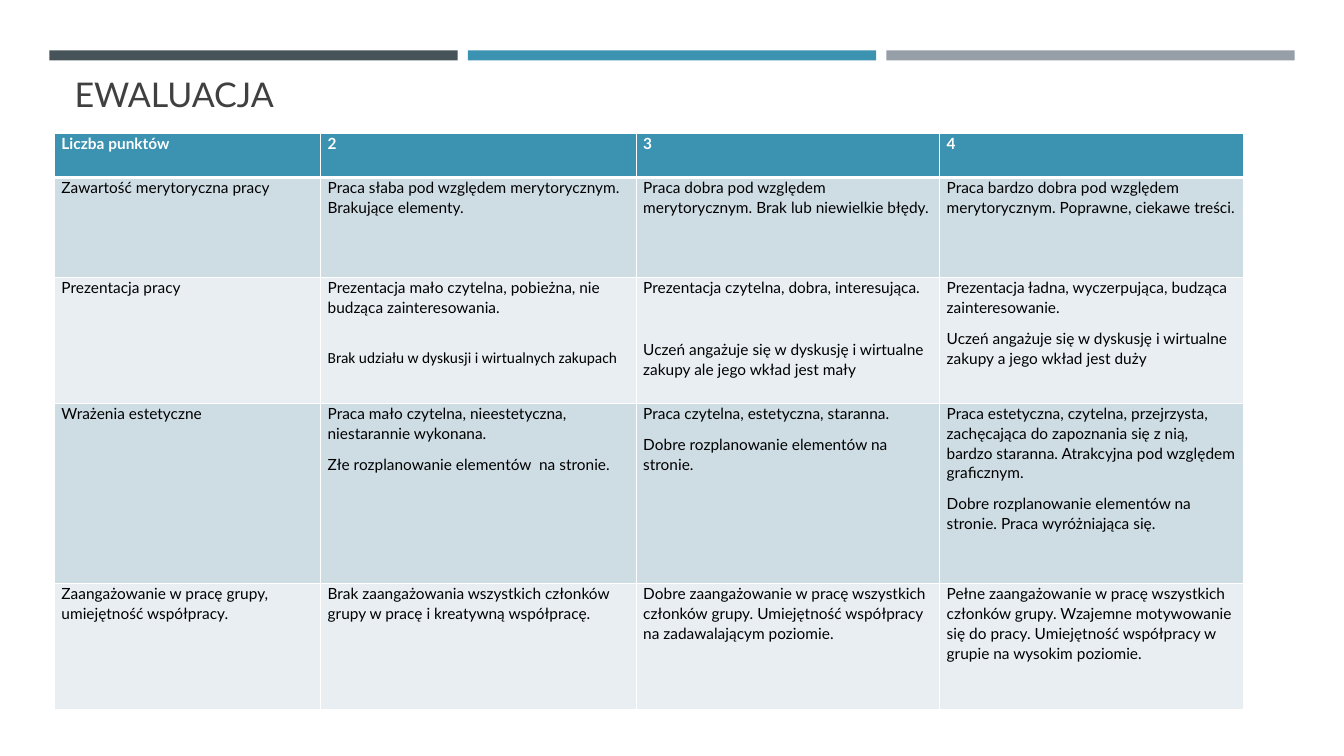
"""Build the evaluation rubric slide."""
from pptx import Presentation, util as u
from pptx.dml.color import RGBColor
from pptx.enum import shapes, text
from pptx.oxml import parse_xml
from pptx.oxml.ns import nsdecls

SLATE = RGBColor(0x46, 0x53, 0x59)
TEAL = RGBColor(0x3B, 0x92, 0xB1)
GREY = RGBColor(0x96, 0x9F, 0xA7)
TITLE = RGBColor(0x40, 0x40, 0x40)
DARK_BAND = RGBColor(0xCE, 0xDC, 0xE4)
LIGHT_BAND = RGBColor(0xE8, 0xEE, 0xF2)
WHITE = RGBColor(0xFF, 0xFF, 0xFF)
BLACK = RGBColor(0, 0, 0)

COLS = [2.64, 3.13, 3.01, 3.01]
ROWS = [0.44, 0.99, 1.25, 1.79, 1.25]
RUBRIC = [
    ["Liczba punktów", "2", "3", "4"],
    ["Zawartość merytoryczna pracy",
     "Praca słaba pod względem merytorycznym. Brakujące elementy.",
     "Praca dobra pod względem merytorycznym. Brak lub niewielkie błędy.",
     "Praca bardzo dobra pod względem merytorycznym. Poprawne, ciekawe treści."],
    ["Prezentacja pracy",
     "Prezentacja mało czytelna, pobieżna, nie budząca zainteresowania.\n"
     "Brak udziału w dyskusji i wirtualnych zakupach",
     "Prezentacja czytelna, dobra, interesująca.\n"
     "Uczeń angażuje się w dyskusję i wirtualne zakupy ale jego wkład jest mały",
     "Prezentacja ładna, wyczerpująca, budząca zainteresowanie.\n"
     "Uczeń angażuje się w dyskusję i wirtualne zakupy a jego wkład jest duży"],
    ["Wrażenia estetyczne",
     "Praca mało czytelna, nieestetyczna, niestarannie wykonana.\n"
     "Złe rozplanowanie elementów  na stronie.",
     "Praca czytelna, estetyczna, staranna.\n"
     "Dobre rozplanowanie elementów na stronie.",
     "Praca estetyczna, czytelna, przejrzysta, zachęcająca do zapoznania się z nią, "
     "bardzo staranna. Atrakcyjna pod względem graficznym.\n"
     "Dobre rozplanowanie elementów na stronie. Praca wyróżniająca się."],
    ["Zaangażowanie w pracę grupy, umiejętność współpracy.",
     "Brak zaangażowania wszystkich członków grupy w pracę i kreatywną współpracę.",
     "Dobre zaangażowanie w pracę wszystkich członków grupy. "
     "Umiejętność współpracy na zadawalającym poziomie.",
     "Pełne zaangażowanie w pracę wszystkich członków grupy. "
     "Wzajemne motywowanie się do pracy. "
     "Umiejętność współpracy w grupie na wysokim poziomie."],
]


def style_run(r, size, color, bold=False, font="Lato"):
    r.font.size, r.font.bold, r.font.name = u.Pt(size), bold, font
    r.font.color.rgb = color


def add_border(cell, side, width):
    cell._tc.get_or_add_tcPr().append(parse_xml(
        f'<a:{side} {nsdecls("a")} w="{u.Pt(width)}"><a:solidFill>'
        f'<a:srgbClr val="{WHITE}"/></a:solidFill></a:{side}>'))


prs = Presentation()
prs.slide_width, prs.slide_height = u.Inches(13.33), u.Inches(7.5)
s = prs.slides.add_slide(prs.slide_layouts[5])

for i, color in enumerate([SLATE, TEAL, GREY]):
    bar = s.shapes.add_shape(shapes.MSO_SHAPE.RECTANGLE, u.Inches(0.49 + 4.15 * i),
                             u.Inches(0.5), u.Inches(4.05), u.Inches(0.1))
    bar.shadow.inherit = False
    bar.fill.solid()
    bar.fill.fore_color.rgb = color
    bar.line.fill.background()

title = s.shapes.title
title.left, title.top = u.Inches(0.64), u.Inches(0.77)
title.width, title.height = u.Inches(12.06), u.Inches(0.42)
tf = title.text_frame
tf.text = "EWALUACJA"
tf.auto_size = text.MSO_AUTO_SIZE.NONE
tf.vertical_anchor = text.MSO_ANCHOR.BOTTOM
p = tf.paragraphs[0]
p.alignment, p.line_spacing = text.PP_ALIGN.LEFT, 0.9
style_run(p.runs[0], 24.3, TITLE)

table = s.shapes.add_table(len(ROWS), len(COLS), u.Inches(0.54), u.Inches(1.32),
                           u.Inches(sum(COLS)), u.Inches(sum(ROWS))).table
for column, width in zip(table.columns, COLS):
    column.width = u.Inches(width)
for row, height in zip(table.rows, ROWS):
    row.height = u.Inches(height)

for i, row in enumerate(RUBRIC):
    header = i == 0
    for j, words in enumerate(row):
        cell = table.cell(i, j)
        cell.margin_left = cell.margin_right = u.Inches(0.07)
        cell.margin_top = cell.margin_bottom = 0
        add_border(cell, "lnL", 1)
        add_border(cell, "lnR", 1)
        add_border(cell, "lnT", 3 if i == 1 else 1)
        add_border(cell, "lnB", 3 if header else 1)
        cell.fill.solid()
        cell.fill.fore_color.rgb = TEAL if header else DARK_BAND if i % 2 else LIGHT_BAND
        cell.text_frame.text = words
        for p in cell.text_frame.paragraphs:
            p.line_spacing, p.space_after = 1.06, u.Pt(8)
            style_run(p.runs[0], 11, WHITE if header else BLACK, header)

no_discussion = table.cell(2, 1).text_frame.paragraphs[1]
no_discussion.space_before = u.Pt(14)
no_discussion.runs[0].font.name = "Calibri"
table.cell(2, 2).text_frame.paragraphs[1].space_before = u.Pt(22)

prs.save("out.pptx")
